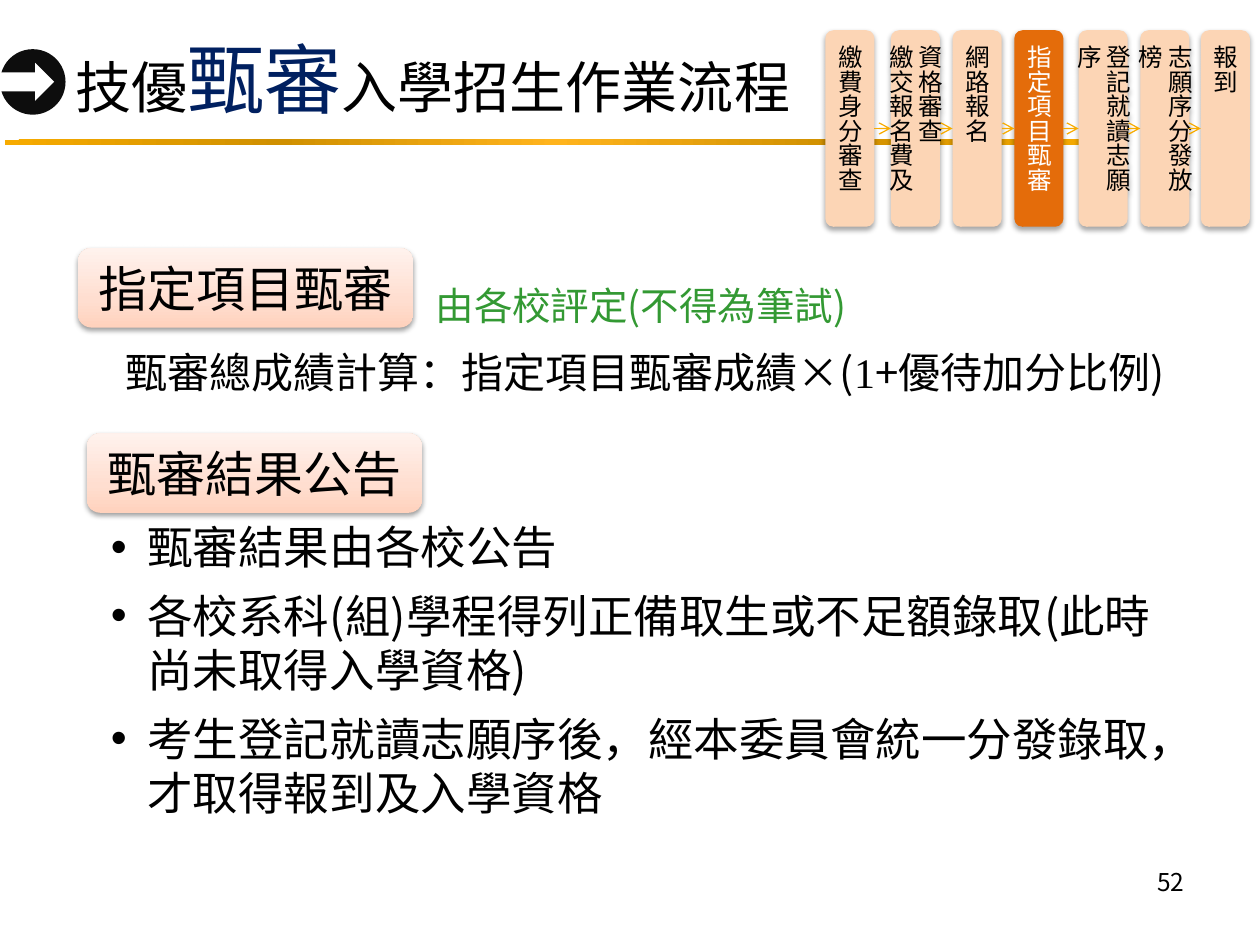
"""Build the slide on the admission steps for skilled students."""
from dataclasses import dataclass

import lxml.etree
import pptx
import pptx.dml.color
import pptx.enum.shapes
import pptx.enum.text
import pptx.oxml.ns
import pptx.util

Inches = pptx.util.Inches
Pt = pptx.util.Pt
SHAPE = pptx.enum.shapes.MSO_SHAPE
ALIGN = pptx.enum.text.PP_ALIGN
ANCHOR = pptx.enum.text.MSO_ANCHOR
qn = pptx.oxml.ns.qn


@dataclass(frozen=True)
class Theme:
    """Hold the fonts, colours and type sizes."""
    font: str = "Noto Sans CJK SC"
    roman: str = "Times New Roman"
    black: str = "000000"
    white: str = "FFFFFF"
    navy: str = "002060"
    green: str = "339933"
    disc: str = "0D0D0D"
    gold: str = "F7AB00"
    peach: str = "FCD5B5"
    orange: str = "E46C0A"
    bar: tuple = ((0, "FFB41D"), (50, "D09000"), (100, "F7AB00"))
    blush: tuple = ((0, "FFD2BD"), (35, "FFDED0"), (100, "FFF2ED"))
    title: int = 32
    accent: int = 44
    label: int = 28
    body: int = 26
    sum: int = 24
    note: int = 22
    small: int = 14


THEME = Theme()
STEPS = (
    (6.55, ("繳費身分審查",)),
    (7.07, ("資格審查", "繳交報名費及")),
    (7.56, ("網路報名",)),
    (8.05, ("指定項目甄審",)),
    (8.56, ("登記就讀志願序",)),
    (9.05, ("志願序分發放榜",)),
    (9.53, ("報到",)),
)
ACTIVE = 3
POINTS = (
    "甄審結果由各校公告",
    "各校系科(組)學程得列正備取生或不足額錄取(此時尚未取得入學資格)",
    "考生登記就讀志願序後，經本委員會統一分發錄取，才取得報到及入學資格",
)


def rgb(code):
    """Turn a hex code into a colour."""
    return pptx.dml.color.RGBColor.from_string(code)


def node(base, tag, **attrs):
    """Append an XML child with the given attributes."""
    return lxml.etree.SubElement(base, qn(tag), {k: str(v) for k, v in attrs.items()})


def style(font, size, color=THEME.black, name=THEME.font):
    """Set size, colour and typeface of a font."""
    font.size, font.name = Pt(size), name
    font.color.rgb = rgb(color)


def place(item, box):
    """Move and size an element in inches."""
    item.left, item.top, item.width, item.height = map(Inches, box)


def hang(para, inch):
    """Give a paragraph a hanging indent."""
    props = para._p.get_or_add_pPr()
    props.set("marL", str(Inches(inch)))
    props.set("indent", str(-Inches(inch)))
    return props


def write(frame, lines, size, color=THEME.black, align=ALIGN.LEFT):
    """Fill a text frame with evenly styled paragraphs."""
    frame.word_wrap = True
    for i, line in enumerate(lines):
        para = frame.paragraphs[0] if i == 0 else frame.add_paragraph()
        para.text, para.alignment = line, align
        style(para.font, size, color)


def add_text(slide, box, line, size, color=THEME.black, align=ALIGN.LEFT):
    """Add a wrapping text box with one paragraph."""
    frame = slide.shapes.add_textbox(*map(Inches, box)).text_frame
    write(frame, [line], size, color, align)


def add_form(slide, kind, box, color):
    """Add a plain filled shape without outline or shadow."""
    form = slide.shapes.add_shape(kind, *map(Inches, box))
    form.shadow.inherit = False
    form.fill.solid()
    form.fill.fore_color.rgb = rgb(color)
    form.line.fill.background()
    return form


def blend(form, stops, angle=None):
    """Give a shape a linear gradient, or a round one without an angle."""
    form.fill.gradient()
    grad = form._element.spPr.find(qn("a:gradFill"))
    for child in list(grad):
        grad.remove(child)
    row = node(grad, "a:gsLst")
    for spot, color in stops:
        node(node(row, "a:gs", pos=spot * 1000), "a:srgbClr", val=color)
    if angle is None:
        path = node(grad, "a:path", path="circle")
        node(path, "a:fillToRect", l=50000, t=50000, r=50000, b=50000)
    else:
        node(grad, "a:lin", ang=angle * 60000, scaled=0)


def shade(form, alpha, drop):
    """Cast a soft black shadow straight down."""
    effect = form._element.spPr.find(qn("a:effectLst"))
    cast = node(effect, "a:outerShdw", blurRad=Pt(3.1), dist=Pt(drop),
                dir=5400000, rotWithShape=0)
    node(node(cast, "a:srgbClr", val=THEME.black), "a:alpha", val=alpha * 1000)


def add_label(slide, left, top, line):
    """Add a rounded section label."""
    form = add_form(slide, SHAPE.ROUNDED_RECTANGLE, (left, top, 2.66, 0.63), THEME.white)
    blend(form, THEME.blush, 270)
    shade(form, 38, 1.6)
    frame = form.text_frame
    frame.vertical_anchor = ANCHOR.TOP
    hang(frame.paragraphs[0], 0.38)
    write(frame, [line], THEME.label, align=ALIGN.CENTER)


def add_step(slide, left, lines, active):
    """Add one upright step box."""
    fill, ink = (THEME.orange, THEME.white) if active else (THEME.peach, THEME.black)
    form = add_form(slide, SHAPE.ROUNDED_RECTANGLE, (left, 0.24, 0.39, 1.56), fill)
    shade(form, 35, 1.8)
    frame = form.text_frame
    frame.vertical_anchor = ANCHOR.MIDDLE
    frame._txBody.bodyPr.set("vert", "eaVert")
    write(frame, lines, THEME.small, ink, ALIGN.JUSTIFY)
    return form


def add_arrow(slide, start, end):
    """Join two step boxes with a thin arrow."""
    line = slide.shapes.add_connector(pptx.enum.shapes.MSO_CONNECTOR.STRAIGHT, 0, 0, 0, 0)
    line.begin_connect(start, 3)
    line.end_connect(end, 1)
    line.line.color.rgb = rgb(THEME.gold)
    line.line.width = Pt(0.75)
    node(line.line._get_or_add_ln(), "a:tailEnd", type="arrow")
    node(line._element.spPr, "a:effectLst")


def fill_title(title):
    """Place the title and enlarge its key word."""
    place(title, (0.5, 0.3, 9, 0.64))
    frame = title.text_frame
    frame.auto_size = pptx.enum.text.MSO_AUTO_SIZE.NONE
    frame.vertical_anchor = ANCHOR.MIDDLE
    para = frame.paragraphs[0]
    para.alignment = ALIGN.LEFT
    for text, size, color in (("技優", THEME.title, THEME.black),
                              ("甄審", THEME.accent, THEME.navy),
                              ("入學招生作業流程", THEME.title, THEME.black)):
        run = para.add_run()
        run.text = text
        style(run.font, size, color)


def fill_body(body):
    """Place the bulleted list."""
    place(body, (0.78, 4.07, 8.75, 2.51))
    frame = body.text_frame
    frame.auto_size = pptx.enum.text.MSO_AUTO_SIZE.NONE
    write(frame, POINTS, THEME.body)
    for i, para in enumerate(frame.paragraphs):
        para.space_before = Pt(8 if i else 0)
        props = hang(para, 0.29)
        mark = lxml.etree.Element(qn("a:buChar"), {"char": "•"})
        props.find(qn("a:defRPr")).addprevious(mark)


def add_sum(slide):
    """Add the score formula with its roman digit."""
    frame = slide.shapes.add_textbox(*map(Inches, (0.9, 2.7, 8.91, 0.5))).text_frame
    frame.word_wrap = True
    para = frame.paragraphs[0]
    hang(para, 0.39)
    for text, name in (("甄審總成績計算：指定項目甄審成績×(", THEME.font),
                       ("1", THEME.roman), ("+優待加分比例)", THEME.font)):
        run = para.add_run()
        run.text = text
        style(run.font, THEME.sum, name=name)


def main():
    """Build and save the slide."""
    deck = pptx.Presentation()
    deck.slide_width, deck.slide_height = Inches(10), Inches(7.5)
    slide = deck.slides.add_slide(deck.slide_layouts[1])
    blend(add_form(slide, SHAPE.RECTANGLE, (0.04, 1.11, 8.74, 0.04), THEME.gold), THEME.bar)
    fill_title(slide.shapes.title)
    fill_body(slide.placeholders[1])
    add_form(slide, SHAPE.OVAL, (0, 0.39, 0.52, 0.52), THEME.disc)
    add_form(slide, SHAPE.RIGHT_ARROW, (0, 0.5, 0.43, 0.3), THEME.white)
    add_sum(slide)
    add_text(slide, (3.36, 2.19, 5.47, 0.47), "由各校評定(不得為筆試)", THEME.note, THEME.green)
    add_label(slide, 0.62, 1.97, "指定項目甄審")
    add_label(slide, 0.69, 3.44, "甄審結果公告")
    steps = [add_step(slide, left, lines, i == ACTIVE)
             for i, (left, lines) in enumerate(STEPS)]
    for start, end in zip(steps, steps[1:]):
        add_arrow(slide, start, end)
    add_text(slide, (7.17, 6.83, 2.33, 0.52), "52", THEME.small, align=ALIGN.RIGHT)
    deck.save("out.pptx")


if __name__ == "__main__":
    main()
